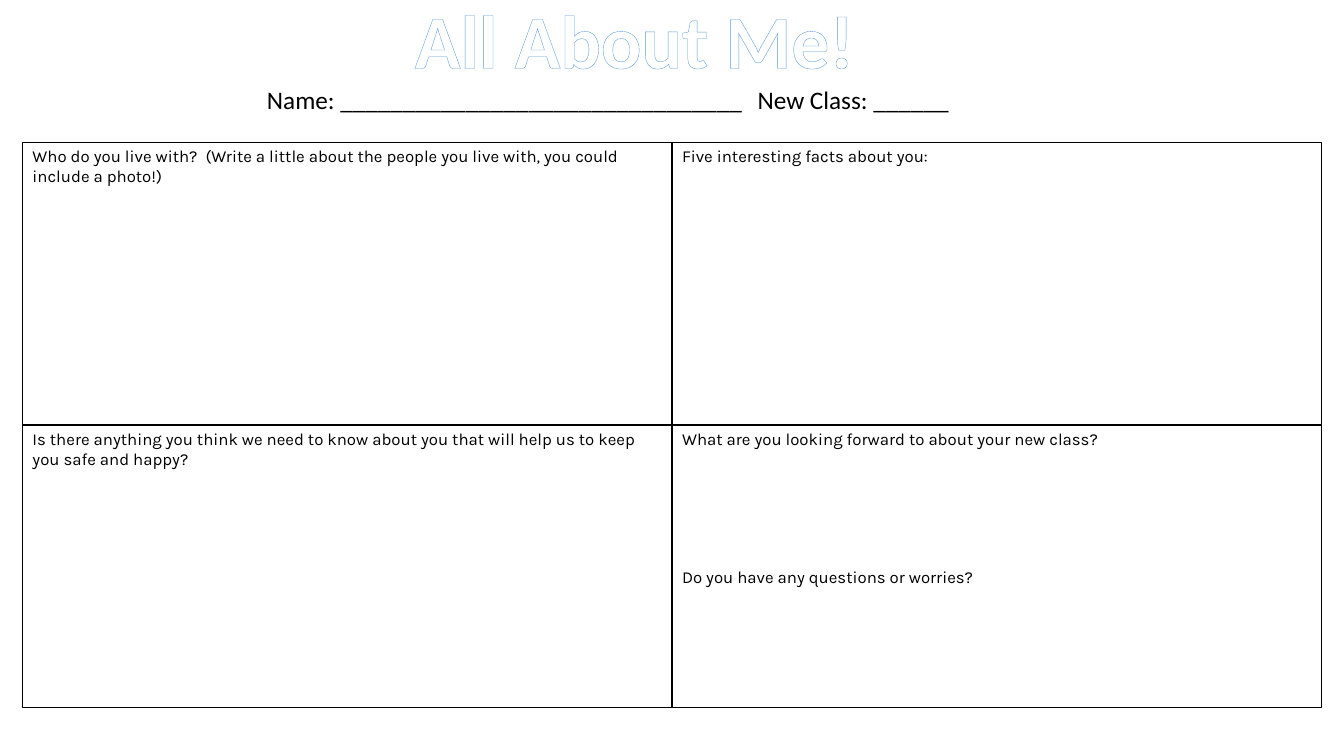
"""Build the "All About Me!" worksheet slide."""
from lxml import etree
from pptx import Presentation
from pptx.dml.color import RGBColor
from pptx.enum.text import MSO_AUTO_SIZE, PP_ALIGN
from pptx.oxml.ns import qn
from pptx.util import Pt

CENTER = PP_ALIGN.CENTER
LEFT = PP_ALIGN.LEFT
FIT_SHAPE = MSO_AUTO_SIZE.SHAPE_TO_FIT_TEXT
BLACK, WHITE, BLUE = "000000", "FFFFFF", "5B9BD5"
BLANK_LAYOUT = 6


def add_run(paragraph, text, font_name, size, color, bold=False):
    run = paragraph.add_run()
    run.text = text
    run.font.name = font_name
    run.font.size = Pt(size)
    run.font.bold = bold
    run.font.color.rgb = RGBColor.from_string(color)
    return run


def add_line(parent, index, tag, width, color):
    line = etree.Element(qn(tag), w=str(Pt(width)))
    fill = etree.SubElement(line, qn("a:solidFill"))
    etree.SubElement(fill, qn("a:srgbClr"), val=color)
    parent.insert(index, line)


presentation = Presentation()
presentation.slide_width = Pt(960)
presentation.slide_height = Pt(540)
slide = presentation.slides.add_slide(presentation.slide_layouts[BLANK_LAYOUT])

questions = [
    [["Who do you live with?  (Write a little about the people you live with, you could include a photo!)"],
     ["Five interesting facts about you:"]],
    [["Is there anything you think we need to know about you that will help us to keep you safe and happy?"],
     ["What are you looking forward to about your new class?",
      "Do you have any questions or worries?"]],
]
table = slide.shapes.add_table(2, 2, Pt(16), Pt(101.5), Pt(928), Pt(404)).table
table.first_row = False
table.horz_banding = False
for row_index, row in enumerate(questions):
    table.rows[row_index].height = Pt(202)
    for column_index, prompts in enumerate(row):
        cell = table.cell(row_index, column_index)
        cell.fill.background()
        properties = cell._tc.get_or_add_tcPr()
        for index, side in enumerate(["a:lnL", "a:lnR", "a:lnT", "a:lnB"]):
            add_line(properties, index, side, 1, BLACK)
        for index, prompt in enumerate(prompts):
            if index == 0:
                paragraph = cell.text_frame.paragraphs[0]
            else:
                paragraph = cell.text_frame.add_paragraph()
                paragraph.space_before = Pt(84.5)
            add_run(paragraph, prompt, "Karla", 12, BLACK)

title = slide.shapes.add_textbox(Pt(287.3), Pt(-8.6), Pt(332), Pt(72.7))
title.text_frame.word_wrap = False
title.text_frame.auto_size = FIT_SHAPE
paragraph = title.text_frame.paragraphs[0]
paragraph.alignment = CENTER
title_run = add_run(paragraph, "All About Me!", "Calibri", 54, WHITE, bold=True)
add_line(title_run.font._element, 0, "a:ln", 0.8, BLUE)

name_line = slide.shapes.add_textbox(Pt(183.6), Pt(56.9), Pt(602), Pt(29))
name_line.text_frame.word_wrap = True
name_line.text_frame.auto_size = FIT_SHAPE
paragraph = name_line.text_frame.paragraphs[0]
paragraph.alignment = LEFT
tab_stops = etree.SubElement(paragraph._p.get_or_add_pPr(), qn("a:tabLst"))
etree.SubElement(tab_stops, qn("a:tab"), pos=str(Pt(350.5)), algn="l")
add_run(paragraph, "Name: ________________________________\tNew Class: ______", "Calibri", 18, BLACK)

presentation.save("out.pptx")
